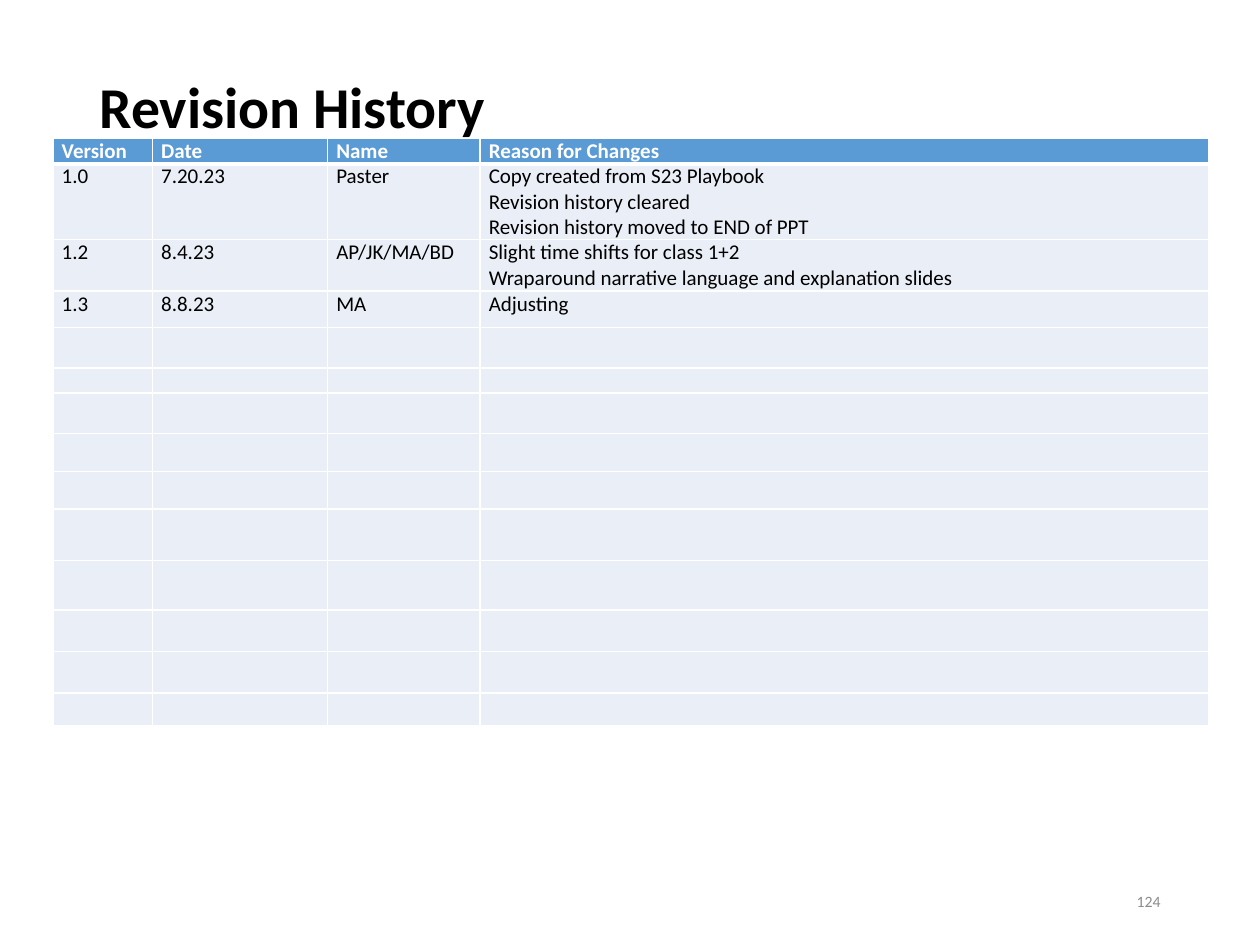
import pptx
import pptx.util
import pptx.enum.text
import pptx.dml.color
import lxml.etree
from pptx.oxml.ns import qn

Inches, Pt = pptx.util.Inches, pptx.util.Pt
RGB = pptx.dml.color.RGBColor.from_string
ALIGN = pptx.enum.text.PP_ALIGN
MIDDLE = pptx.enum.text.MSO_ANCHOR.MIDDLE

FONT = "Calibri"
COLORS = {"text": "000000", "head": "5B9BD5", "body": "EAEFF7",
          "white": "FFFFFF", "gray": "8C8C8C"}
COLS = [0.79, 1.39, 1.21, 5.78]
ROWS = [0.2, 0.6, 0.41, 0.29, 0.32, 0.2, 0.32,
        0.3, 0.3, 0.41, 0.39, 0.33, 0.33, 0.26]
DATA = [
    ["Version", "Date", "Name", "Reason for Changes"],
    ["1.0", "7.20.23", "Paster",
     "Copy created from S23 Playbook\nRevision history cleared\n"
     "Revision history moved to END of PPT"],
    ["1.2", "8.4.23", "AP/JK/MA/BD",
     "Slight time shifts for class 1+2\n"
     "Wraparound narrative language and explanation slides"],
    ["1.3", "8.8.23", "MA", "Adjusting"],
]


def style(frame, size, color, bold=False):
    for para in frame.paragraphs:
        for run in para.runs:
            font = run.font
            font.name, font.size, font.bold = FONT, Pt(size), bold
            font.color.rgb = RGB(COLORS[color])


def add_text(slide, box, text, size, color, bold=False, align=ALIGN.LEFT):
    shape = slide.shapes.add_textbox(*map(Inches, box))
    frame = shape.text_frame
    frame.word_wrap = True
    frame.vertical_anchor = MIDDLE
    frame.text = text
    frame.paragraphs[0].alignment = align
    style(frame, size, color, bold)
    return frame


def add_title(slide, box):
    frame = add_text(slide, box, "Revision History", 33, "text", True)
    frame.paragraphs[0].line_spacing = 0.9
    # Lift the line so that it sits just above the table
    frame.margin_bottom = Inches(0.55)


def add_edges(cell, widths):
    props = cell._tc.get_or_add_tcPr()
    for side, width in zip("LRTB", widths):
        line = lxml.etree.SubElement(props, qn("a:ln" + side), w=str(Pt(width)))
        fill = lxml.etree.SubElement(line, qn("a:solidFill"))
        lxml.etree.SubElement(fill, qn("a:srgbClr"), val=COLORS["white"])


def fill_cell(cell, text, row):
    head = row == 0
    add_edges(cell, [1, 1, 3 if row == 1 else 1, 3 if head else 1])
    cell.fill.solid()
    cell.fill.fore_color.rgb = RGB(COLORS["head" if head else "body"])
    cell.margin_left = cell.margin_right = Inches(0.07)
    cell.margin_top = cell.margin_bottom = 0
    frame = cell.text_frame
    if text:
        frame.text = text
        style(frame, 12, "white" if head else "text", head)
    else:
        # The size of an empty cell sets its least height
        end = frame.paragraphs[0]._p.get_or_add_endParaRPr()
        end.set("sz", "1200")


def add_history(slide, box):
    shape = slide.shapes.add_table(len(ROWS), len(COLS), *map(Inches, box))
    table = shape.table
    for col, width in zip(table.columns, COLS):
        col.width = Inches(width)
    for r, height in enumerate(ROWS):
        table.rows[r].height = Inches(height)
        texts = DATA[r] if r < len(DATA) else [""] * len(COLS)
        for c, text in enumerate(texts):
            fill_cell(table.cell(r, c), text, r)


def main():
    deck = pptx.Presentation()
    deck.slide_width, deck.slide_height = Inches(10), Inches(7.5)
    slide = deck.slides.add_slide(deck.slide_layouts[6])
    add_title(slide, (0.69, 0.4, 8.62, 1.45))
    add_history(slide, (0.42, 1.1, sum(COLS), sum(ROWS)))
    # Page number
    add_text(slide, (7.06, 6.95, 2.25, 0.4), "124", 9, "gray", align=ALIGN.RIGHT)
    deck.save("out.pptx")


if __name__ == "__main__":
    main()
